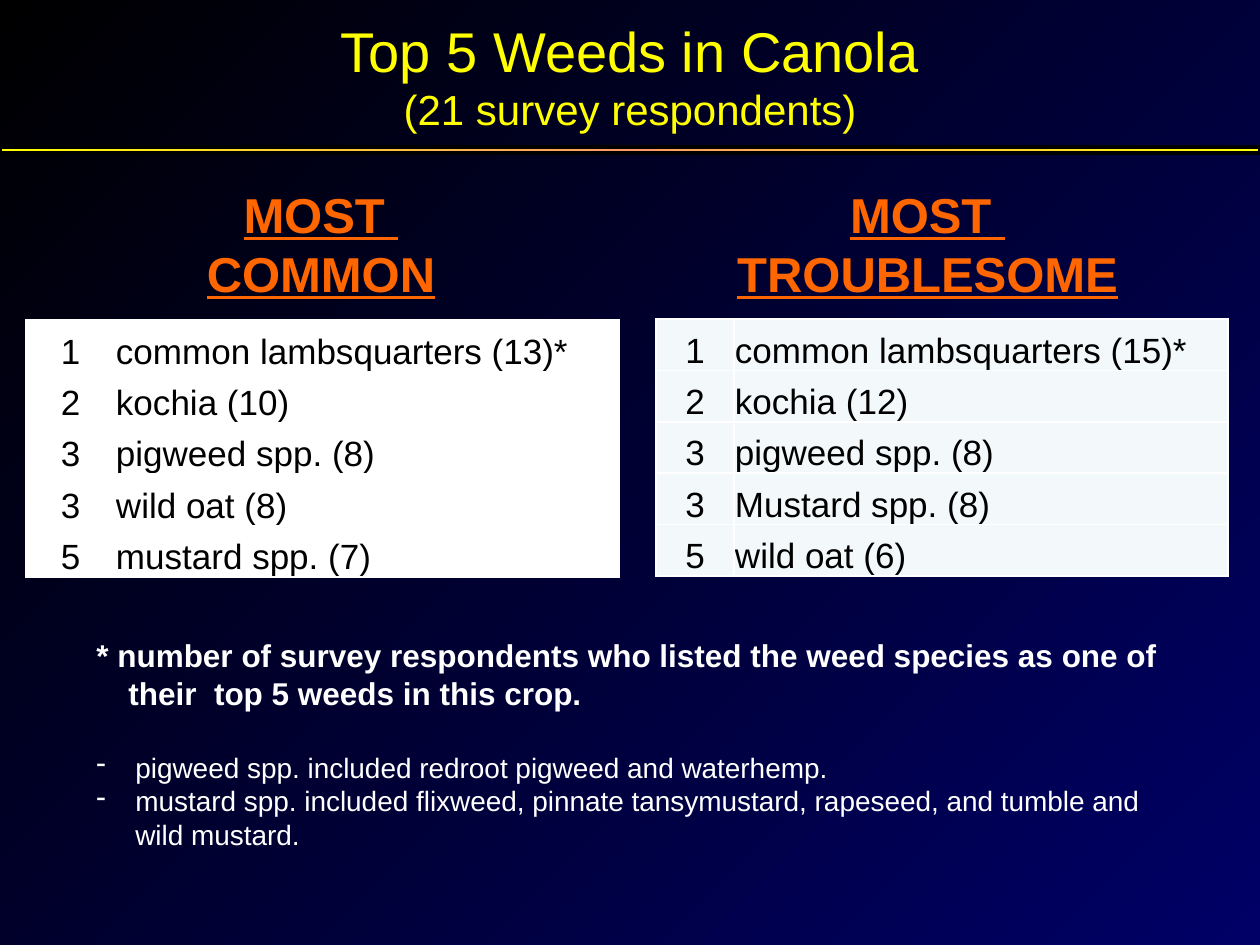
from copy import deepcopy
from dataclasses import dataclass

from lxml.etree import SubElement
from pptx import Presentation
from pptx.dml.color import RGBColor as Color
from pptx.enum.shapes import MSO_SHAPE as Preset
from pptx.enum.text import MSO_ANCHOR as Anchor, MSO_AUTO_SIZE as AutoSize, PP_ALIGN as Align
from pptx.oxml.ns import qn
from pptx.util import Emu, Pt


@dataclass(frozen=True)
class Theme:
    font: str = "Arial"
    black: str = "000000"
    navy: str = "000066"
    yellow: str = "FFFF00"
    peach: str = "FF9966"
    orange: str = "FF6600"
    white: str = "FFFFFF"
    mist: str = "F3F9FA"
    title: int = 32
    subtitle: int = 24
    heading: int = 28
    cell: int = 20
    note: int = 18
    detail: int = 16


@dataclass(frozen=True)
class Area:
    left: int
    top: int
    width: int
    height: int


@dataclass(frozen=True)
class Style:
    size: int
    color: str
    bold: bool = False
    underline: bool = False


@dataclass(frozen=True)
class Line:
    text: str
    style: Style
    align: Align = Align.LEFT
    hang: int = 0
    bullet: str = ""
    before: int = 0


@dataclass(frozen=True)
class Ranking:
    heading: tuple
    heading_area: Area
    wrap: bool
    table_area: Area
    rank_width: int
    fill: str
    weeds: tuple


THEME = Theme()
TITLE = Style(THEME.title, THEME.yellow)
SUBTITLE = Style(THEME.subtitle, THEME.yellow)
HEADING = Style(THEME.heading, THEME.orange, bold=True, underline=True)
CELL = Style(THEME.cell, THEME.black)
NOTE = Style(THEME.note, THEME.white, bold=True)
DETAIL = Style(THEME.detail, THEME.white)

RANKINGS = (
    Ranking(
        ("MOST ", "COMMON"), Area(170, 178, 302, 131), True,
        Area(26, 320, 593, 257), 89, THEME.white,
        (("1", "common lambsquarters (13)*"), ("2", "kochia (10)"), ("3", "pigweed spp. (8)"),
         ("3", "wild oat (8)"), ("5", "mustard spp. (7)")),
    ),
    Ranking(
        ("MOST ", "TROUBLESOME"), Area(722, 178, 411, 131), False,
        Area(656, 319, 572, 257), 78, THEME.mist,
        (("1", "common lambsquarters (15)*"), ("2", "kochia (12)"), ("3", "pigweed spp. (8)"),
         ("3", "Mustard spp. (8)"), ("5", "wild oat (6)")),
    ),
)

NOTES = (
    Line("* number of survey respondents who listed the weed species as one of "
         "their  top 5 weeds in this crop.", NOTE, hang=32),
    Line("pigweed spp. included redroot pigweed and waterhemp.", DETAIL,
         hang=39, bullet="-", before=22),
    Line("mustard spp. included flixweed, pinnate tansymustard, rapeseed, "
         "and tumble and wild mustard.", DETAIL, hang=39, bullet="-"),
)


def px(length: int) -> Emu:
    """Turn pixels into EMU."""
    return Emu(round(length * 914400 / 126))


def place(area: Area) -> tuple:
    """Give an area as four EMU lengths."""
    return px(area.left), px(area.top), px(area.width), px(area.height)


def paint_gradient(fill, owner, angle: int, colors: tuple) -> None:
    """Fill with evenly spaced gradient stops."""
    fill.gradient()
    fill.gradient_angle = angle
    stops = next(owner.iter(qn("a:gsLst")))
    for _ in colors[2:]:
        stops.append(deepcopy(stops[0]))
    for index, (stop, color) in enumerate(zip(fill.gradient_stops, colors)):
        stop.color.rgb = Color.from_string(color)
        stop.position = index / (len(colors) - 1)


def write(frame, lines: tuple) -> None:
    """Write one paragraph for each line."""
    for index, line in enumerate(lines):
        para = frame.add_paragraph() if index else frame.paragraphs[0]
        para.alignment = line.align
        if line.before:
            para.space_before = Pt(line.before)
        if line.hang:
            props = para._p.get_or_add_pPr()
            props.set("marL", str(px(line.hang)))
            props.set("indent", str(-px(line.hang)))
            if line.bullet:
                SubElement(props, qn("a:buChar"), char=line.bullet)
        span = para.add_run()
        span.text = line.text
        span.font.name = THEME.font
        span.font.size = Pt(line.style.size)
        span.font.bold = line.style.bold
        span.font.underline = line.style.underline
        span.font.color.rgb = Color.from_string(line.style.color)


def add_text(page, area: Area, lines: tuple, wrap: bool = True, grow: bool = True) -> None:
    """Add a text box, centred vertically when it does not grow."""
    frame = page.shapes.add_textbox(*place(area)).text_frame
    frame.word_wrap = wrap
    frame.auto_size = AutoSize.SHAPE_TO_FIT_TEXT if grow else AutoSize.NONE
    frame.vertical_anchor = Anchor.TOP if grow else Anchor.MIDDLE
    write(frame, lines)


def outline_cell(cell, color: str) -> None:
    """Draw a one-point border on every side of a cell."""
    props = cell._tc.get_or_add_tcPr()
    for index, side in enumerate(("lnL", "lnR", "lnT", "lnB")):
        border = SubElement(props, qn(f"a:{side}"), w=str(Pt(1)))
        paint = SubElement(border, qn("a:solidFill"))
        SubElement(paint, qn("a:srgbClr"), val=color)
        props.insert(index, border)


def add_ranking(page, ranking: Ranking) -> None:
    """Add a heading and its table of ranked weeds."""
    heading = tuple(Line(text, HEADING, Align.CENTER) for text in ranking.heading)
    add_text(page, ranking.heading_area, heading, ranking.wrap)
    area = ranking.table_area
    table = page.shapes.add_table(len(ranking.weeds), 2, *place(area)).table
    table.first_row = table.horz_banding = False
    table.columns[0].width = px(ranking.rank_width)
    table.columns[1].width = px(area.width - ranking.rank_width)
    for row, weed in zip(table.rows, ranking.weeds):
        for cell, text, align in zip(row.cells, weed, (Align.CENTER, Align.LEFT)):
            cell.margin_left = cell.margin_right = cell.margin_top = px(1)
            cell.margin_bottom = 0
            cell.vertical_anchor = Anchor.BOTTOM
            cell.fill.solid()
            cell.fill.fore_color.rgb = Color.from_string(ranking.fill)
            outline_cell(cell, THEME.white)
            write(cell.text_frame, (Line(text, CELL, align),))


def add_rule(page, area: Area) -> None:
    """Add the gradient bar under the title."""
    bar = page.shapes.add_shape(Preset.RECTANGLE, *place(area))
    bar.shadow.inherit = False
    paint_gradient(bar.fill, bar.element, 0, (THEME.yellow, THEME.peach, THEME.yellow))
    bar.line.color.rgb = Color.from_string(THEME.black)
    bar.line.width = Pt(2.25)


def main() -> None:
    """Build the weed survey slide."""
    deck = Presentation()
    deck.slide_width, deck.slide_height = px(1260), px(945)
    page = deck.slides.add_slide(deck.slide_layouts[6])
    paint_gradient(page.background.fill, page.element, 315, (THEME.black, THEME.navy))
    title = (Line("Top 5 Weeds in Canola", TITLE, Align.CENTER),
             Line("(21 survey respondents)", SUBTITLE, Align.CENTER))
    add_text(page, Area(42, 0, 1176, 151), title, grow=False)
    for ranking in RANKINGS:
        add_ranking(page, ranking)
    add_text(page, Area(84, 630, 1113, 229), NOTES)
    add_rule(page, Area(0, 147, 1260, 6))
    deck.save("out.pptx")


if __name__ == "__main__":
    main()
